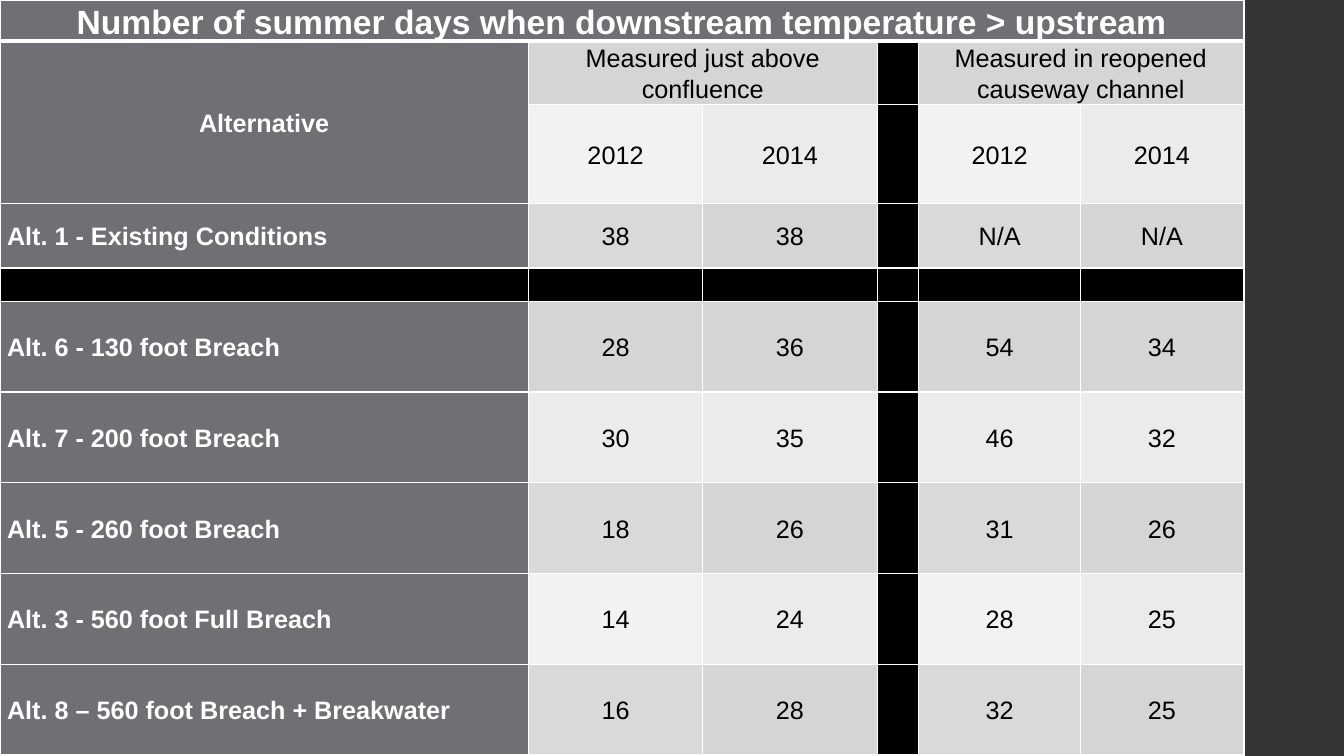
from lxml.etree import SubElement
from pptx import Presentation
from pptx.dml.color import RGBColor
from pptx.enum.shapes import MSO_SHAPE
from pptx.enum.text import MSO_ANCHOR, PP_ALIGN
from pptx.oxml.ns import qn
from pptx.util import Inches, Pt

WHITE = RGBColor(0xFF, 0xFF, 0xFF)
BLACK = RGBColor(0x00, 0x00, 0x00)
CHARCOAL = RGBColor(0x35, 0x35, 0x37)
HEADER_GRAY = RGBColor(0x6F, 0x6F, 0x74)
MEDIUM = RGBColor(0xD5, 0xD5, 0xD6)
MEDIUM_LIGHT = RGBColor(0xD9, 0xD9, 0xD9)
PALE = RGBColor(0xEB, 0xEB, 0xEB)
PALEST = RGBColor(0xF2, 0xF2, 0xF2)

SLIDE_WIDTH, SLIDE_HEIGHT = 13.33, 7.5
TABLE_WIDTH, BAND_LEFT = 12.34, 12.35
COLUMN_WIDTHS = [5.24, 1.73, 1.73, 0.41, 1.61, 1.61]
ROW_HEIGHTS = [0.4, 0.63, 0.98, 0.64, 0.33] + [0.9] * 5
GAP_COLUMN, GAP_ROW = 3, 4
VALUE_COLUMNS = [1, 2, 4, 5]

TITLE = "Number of summer days when downstream temperature > upstream"
SITES = {1: "Measured just above confluence", 4: "Measured in reopened causeway channel"}
YEARS = ["2012", "2014"] * 2

# Row number: label, values, fills of the 2012 and 2014 columns
ALTERNATIVES = {
    3: ("Alt. 1 - Existing Conditions", ["38", "38", "N/A", "N/A"], (MEDIUM_LIGHT, MEDIUM)),
    5: ("Alt. 6 - 130 foot Breach", ["28", "36", "54", "34"], (MEDIUM, MEDIUM)),
    6: ("Alt. 7 - 200 foot Breach", ["30", "35", "46", "32"], (PALE, PALE)),
    7: ("Alt. 5 - 260 foot Breach", ["18", "26", "31", "26"], (MEDIUM_LIGHT, MEDIUM)),
    8: ("Alt. 3 - 560 foot Full Breach", ["14", "24", "28", "25"], (PALEST, PALE)),
    9: ("Alt. 8 – 560 foot Breach + Breakwater", ["16", "28", "32", "25"], (MEDIUM_LIGHT, MEDIUM)),
}


def write_text(cell, text, fill, size=18, color=BLACK, bold=False, align=PP_ALIGN.CENTER):
    cell.fill.solid()
    cell.fill.fore_color.rgb = fill
    paragraph = cell.text_frame.paragraphs[0]
    paragraph.alignment = align
    paragraph.line_spacing = 1.1
    run = paragraph.add_run()
    run.text = text
    run.font.name = "Arial"
    run.font.size = Pt(size)
    run.font.bold = bold
    run.font.color.rgb = color


def write_header(cell, text, **text_format):
    write_text(cell, text, HEADER_GRAY, color=WHITE, bold=True, **text_format)


def set_borders(cell, top=1, bottom=1):
    properties = cell._tc.get_or_add_tcPr()
    sides = {"a:lnL": 1, "a:lnR": 1, "a:lnT": top, "a:lnB": bottom}
    for position, (side, width) in enumerate(sides.items()):
        line = SubElement(properties, qn(side), w=str(Pt(width)))
        fill = SubElement(line, qn("a:solidFill"))
        SubElement(fill, qn("a:srgbClr"), val=str(WHITE))
        properties.insert(position, line)


def format_grid(table):
    """Give every cell its margins, borders and a black base fill."""
    for column, width in zip(table.columns, COLUMN_WIDTHS):
        column.width = Inches(width)
    for row_number, (row, height) in enumerate(zip(table.rows, ROW_HEIGHTS)):
        row.height = Inches(height)
        for cell in row.cells:
            cell.margin_left = cell.margin_right = Inches(0.07)
            cell.margin_top = cell.margin_bottom = 0
            cell.vertical_anchor = MSO_ANCHOR.MIDDLE
            cell.fill.solid()
            cell.fill.fore_color.rgb = BLACK
            set_borders(cell, top=3 if row_number == 1 else 1,
                        bottom=3 if row_number == 0 else 1)


def fill_values(table, row, values, fills):
    for index, (column, value) in enumerate(zip(VALUE_COLUMNS, values)):
        write_text(table.cell(row, column), value, fills[index % 2])


def add_temperature_table(slide, left, top, width, height):
    frame = slide.shapes.add_table(len(ROW_HEIGHTS), len(COLUMN_WIDTHS),
                                   Inches(left), Inches(top), Inches(width), Inches(height))
    table = frame.table
    table.first_row = table.horz_banding = False
    format_grid(table)

    # Heading rows
    table.cell(0, 0).merge(table.cell(0, len(COLUMN_WIDTHS) - 1))
    write_header(table.cell(0, 0), TITLE, size=24)
    table.cell(1, 0).merge(table.cell(2, 0))
    write_header(table.cell(1, 0), "Alternative")
    for column, site in SITES.items():
        table.cell(1, column).merge(table.cell(1, column + 1))
        write_text(table.cell(1, column), site, MEDIUM)
    fill_values(table, 2, YEARS, (PALEST, PALE))

    # One row for each alternative
    for row, (label, values, fills) in ALTERNATIVES.items():
        write_header(table.cell(row, 0), label, align=PP_ALIGN.LEFT)
        fill_values(table, row, values, fills)


def add_side_band(slide, left, top, width, height):
    band = slide.shapes.add_shape(MSO_SHAPE.RECTANGLE, Inches(left), Inches(top),
                                  Inches(width), Inches(height))
    band.shadow.inherit = False
    band.fill.solid()
    band.fill.fore_color.rgb = CHARCOAL
    band.line.fill.background()


def main():
    presentation = Presentation()
    presentation.slide_width = Inches(SLIDE_WIDTH)
    presentation.slide_height = Inches(SLIDE_HEIGHT)
    slide = presentation.slides.add_slide(presentation.slide_layouts[6])
    add_side_band(slide, BAND_LEFT, 0, SLIDE_WIDTH - BAND_LEFT, SLIDE_HEIGHT)
    add_temperature_table(slide, 0, 0, TABLE_WIDTH, SLIDE_HEIGHT)
    presentation.save("out.pptx")


if __name__ == "__main__":
    main()
